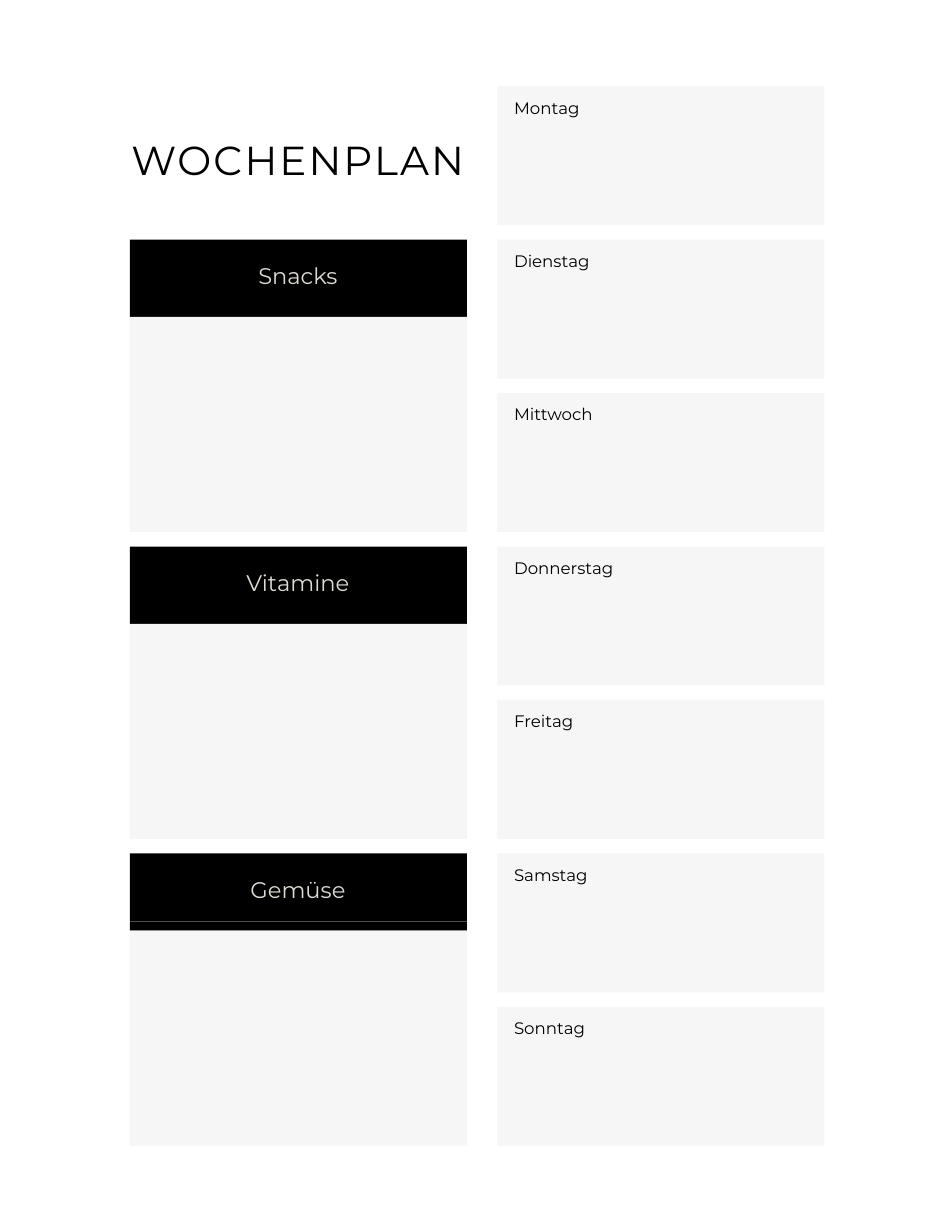
import pptx
import pptx.dml.color
import pptx.enum.shapes
import pptx.enum.text
import pptx.util

COLORS = {"ink": "000000", "panel": "F6F6F6", "label": "DEDBD4"}
COLUMNS, ROWS = 850, 1100
TOP, PITCH = 77, 137
LEFT, LEFT_WIDTH = 116, 301
RIGHT, RIGHT_WIDTH = 444, 292
BAND, STRIP, PANEL = 61, 8, 192
DAYS = ["Montag", "Dienstag", "Mittwoch", "Donnerstag", "Freitag", "Samstag", "Sonntag"]
TOPICS = ["Snacks", "Vitamine", "Gemüse"]


def format_text(para, text, size, leading, color="ink", align="LEFT", spacing=0, font="Montserrat"):
    para.alignment = getattr(pptx.enum.text.PP_ALIGN, align)
    para.line_spacing = pptx.util.Pt(leading)
    span = para.add_run()
    span.text = text
    span.font.name = font
    span.font.size = pptx.util.Pt(size)
    span.font.color.rgb = pptx.dml.color.RGBColor.from_string(COLORS[color])
    if spacing:
        span.font._element.set("spc", str(round(spacing * 100)))


class Planner:
    """Draws blocks and text on a fine grid of columns and rows."""

    def __init__(self, deck):
        self.page = deck.slides.add_slide(deck.slide_layouts[6])
        self.column = deck.slide_width / COLUMNS
        self.row = deck.slide_height / ROWS

    def place(self, left, top, width, height):
        return [round(left * self.column), round(top * self.row),
                round(width * self.column), round(height * self.row)]

    def block(self, left, top, width, height, color):
        shape = self.page.shapes.add_shape(
            pptx.enum.shapes.MSO_SHAPE.RECTANGLE, *self.place(left, top, width, height))
        shape.shadow.inherit = False
        shape.fill.solid()
        shape.fill.fore_color.rgb = pptx.dml.color.RGBColor.from_string(COLORS[color])
        shape.line.fill.background()

    def text(self, left, top, width, height, text, **style):
        box = self.page.shapes.add_textbox(*self.place(left, top, width, height))
        frame = box.text_frame
        frame.word_wrap = True
        frame.margin_left = frame.margin_right = frame.margin_top = frame.margin_bottom = 0
        format_text(frame.paragraphs[0], text, **style)

    def topic(self, top, name):
        self.block(LEFT, top, LEFT_WIDTH, BAND, "ink")
        self.block(LEFT, top + BAND, LEFT_WIDTH, STRIP, "ink")
        self.block(LEFT, top + BAND + STRIP, LEFT_WIDTH, PANEL, "panel")
        self.text(LEFT + 38, top + 16, 224, 27, name,
                  size=14.5, leading=20.3, color="label", align="CENTER")

    def day(self, top, name):
        self.block(RIGHT, top, RIGHT_WIDTH, 124, "panel")
        self.text(RIGHT + 15, top + 7, 224, 21, name, size=10.7, leading=15)


def main():
    deck = pptx.Presentation()
    deck.slide_width = pptx.util.Inches(8.5)
    deck.slide_height = pptx.util.Inches(11)
    planner = Planner(deck)
    planner.text(101, 113, 330, 48, "WOCHENPLAN",
                 size=26, leading=36.4, align="CENTER", spacing=1.3)
    for index, name in enumerate(TOPICS):
        planner.topic(TOP + (2 * index + 1) * PITCH, name)
    for index, name in enumerate(DAYS):
        planner.day(TOP + index * PITCH, name)
    deck.save("out.pptx")


if __name__ == "__main__":
    main()
